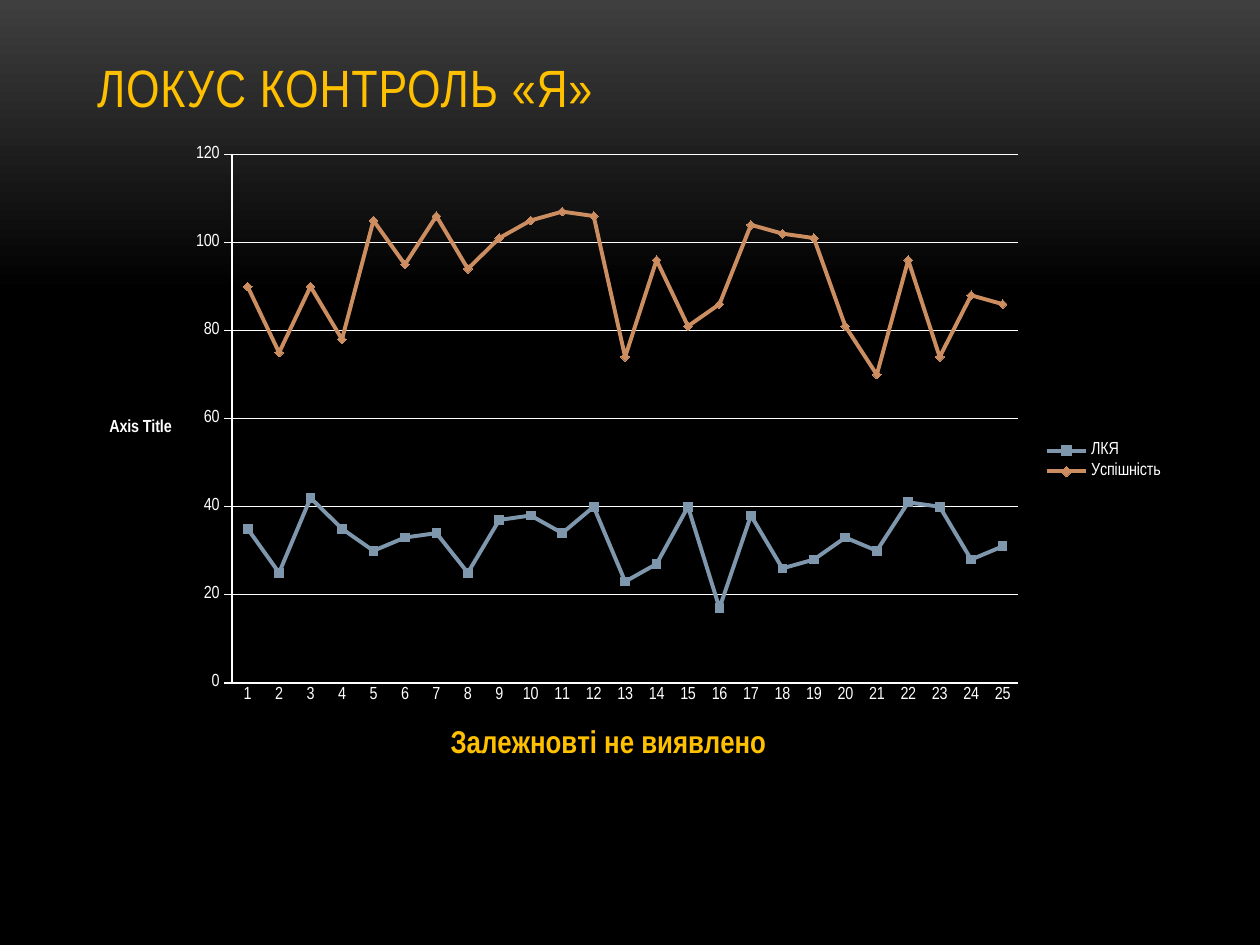
from copy import deepcopy

from lxml import etree
from pptx import Presentation
from pptx.chart.data import CategoryChartData
from pptx.dml.color import RGBColor
from pptx.enum.chart import XL_CHART_TYPE, XL_LEGEND_POSITION, XL_TICK_MARK
from pptx.enum.text import MSO_ANCHOR, PP_ALIGN
from pptx.oxml.ns import qn
from pptx.util import Inches, Pt

LINE = XL_CHART_TYPE.LINE
RIGHT = XL_LEGEND_POSITION.RIGHT
NO_TICK, OUTSIDE = XL_TICK_MARK.NONE, XL_TICK_MARK.OUTSIDE
BOTTOM, LEFT = MSO_ANCHOR.BOTTOM, PP_ALIGN.LEFT
TITLE_ONLY = 5
FONT = "Arial Narrow"
COLORS = {
    "glow": "3F3F3F",
    "black": "000000",
    "white": "FFFFFF",
    "gold": "FFC000",
    "ЛКЯ": "7E97AD",
    "Успішність": "CC8E60",
}
SCORES = {
    "ЛКЯ": (35, 25, 42, 35, 30, 33, 34, 25, 37, 38, 34, 40, 23,
            27, 40, 17, 38, 26, 28, 33, 30, 41, 40, 28, 31),
    "Успішність": (90, 75, 90, 78, 105, 95, 106, 94, 101, 105, 107, 106, 74,
                   96, 81, 86, 104, 102, 101, 81, 70, 96, 74, 88, 86),
}


class SlideBuilder:
    """Holds the style and the current slide, and adds each kind of element."""

    def __init__(self, deck):
        self.page = deck.slides.add_slide(deck.slide_layouts[TITLE_ONLY])

    def color(self, name):
        return RGBColor.from_string(COLORS[name])

    def style(self, font, size, color, bold=False):
        font.name, font.size, font.bold = FONT, Pt(size), bold
        font.color.rgb = self.color(color)

    def line(self, line_format, color, width):
        line_format.color.rgb = self.color(color)
        line_format.width = Pt(width)

    def background(self):
        fill = self.page.background.fill
        fill.gradient()
        fill.gradient_angle = 270
        for stop, color, position in zip(fill.gradient_stops, ("glow", "black"), (0, 0.31)):
            stop.color.rgb = self.color(color)
            stop.position = position
        stops = next(self.page.element.iter(qn("a:gsLst")))
        stops.append(deepcopy(stops[-1]))
        fill.gradient_stops[2].position = 1

    def title(self, text, left, top, width, height):
        box = self.page.shapes.title
        box.left, box.top, box.width, box.height = map(Inches, (left, top, width, height))
        frame = box.text_frame
        frame.text = text
        frame.vertical_anchor = BOTTOM
        para = frame.paragraphs[0]
        para.alignment = LEFT
        span = para.runs[0]
        self.style(span.font, 30, "gold")
        span.font._element.set("spc", "50")

    def place(self, element, index, **settings):
        layout = element.find(qn("c:layout"))
        if layout is not None:
            element.remove(layout)
        layout = etree.Element(qn("c:layout"))
        element.insert(index, layout)
        manual = etree.SubElement(layout, qn("c:manualLayout"))
        for name, value in settings.items():
            etree.SubElement(manual, qn(f"c:{name}")).set("val", str(value))

    def axis_title(self, axis, text, size, color, x, y):
        heading = axis.axis_title
        frame = heading.text_frame
        frame.text = text
        self.style(frame.paragraphs[0].runs[0].font, size, color, bold=True)
        body = next(heading.element.iter(qn("a:bodyPr")))
        body.set("rot", "0")
        body.set("vert", "horz")
        self.place(heading.element, 1, xMode="edge", yMode="edge", x=x, y=y)

    def line_chart(self, scores, left, top, width, height):
        data = CategoryChartData()
        data.categories = [str(number + 1) for number in range(len(scores["ЛКЯ"]))]
        for name, values in scores.items():
            data.add_series(name, values)
        frame = self.page.shapes.add_chart(
            LINE, Inches(left), Inches(top), Inches(width), Inches(height), data)
        chart = frame.chart
        self.style(chart.font, 10, "white")
        chart.has_title = False
        chart.has_legend = True
        chart.legend.position = RIGHT
        chart.legend.include_in_layout = False
        chart.plots[0].vary_by_categories = False
        for series in chart.plots[0].series:
            series.smooth = False
            series.marker.style = None
            self.line(series.format.line, series.name, 2.25)
        category, value = chart.category_axis, chart.value_axis
        for axis, tick in ((category, NO_TICK), (value, OUTSIDE)):
            axis.major_tick_mark, axis.minor_tick_mark = tick, NO_TICK
            self.line(axis.format.line, "white", 0.75)
        value.minimum_scale, value.maximum_scale, value.major_unit = 0, 120, 20
        value.has_major_gridlines = True
        self.line(value.major_gridlines.format.line, "white", 0.75)
        self.axis_title(category, "Залежновті не виявлено", 18, "gold", 0.33, 0.9)
        self.axis_title(value, "Axis Title", 10, "white", 0.02, 0.43)
        plot_area = next(chart.element.iter(qn("c:plotArea")))
        self.place(plot_area, 0, layoutTarget="inner", xMode="edge", yMode="edge",
                   x=0.135, y=0.03, w=0.72, h=0.81)


def main():
    deck = Presentation()
    deck.slide_width, deck.slide_height = Inches(10), Inches(7.5)
    builder = SlideBuilder(deck)
    builder.background()
    builder.title("ЛОКУС КОНТРОЛЬ «Я»", 0.67, 0.3, 8.66, 0.69)
    builder.line_chart(SCORES, 0.67, 1.07, 8.67, 5.18)
    deck.save("out.pptx")


if __name__ == "__main__":
    main()
